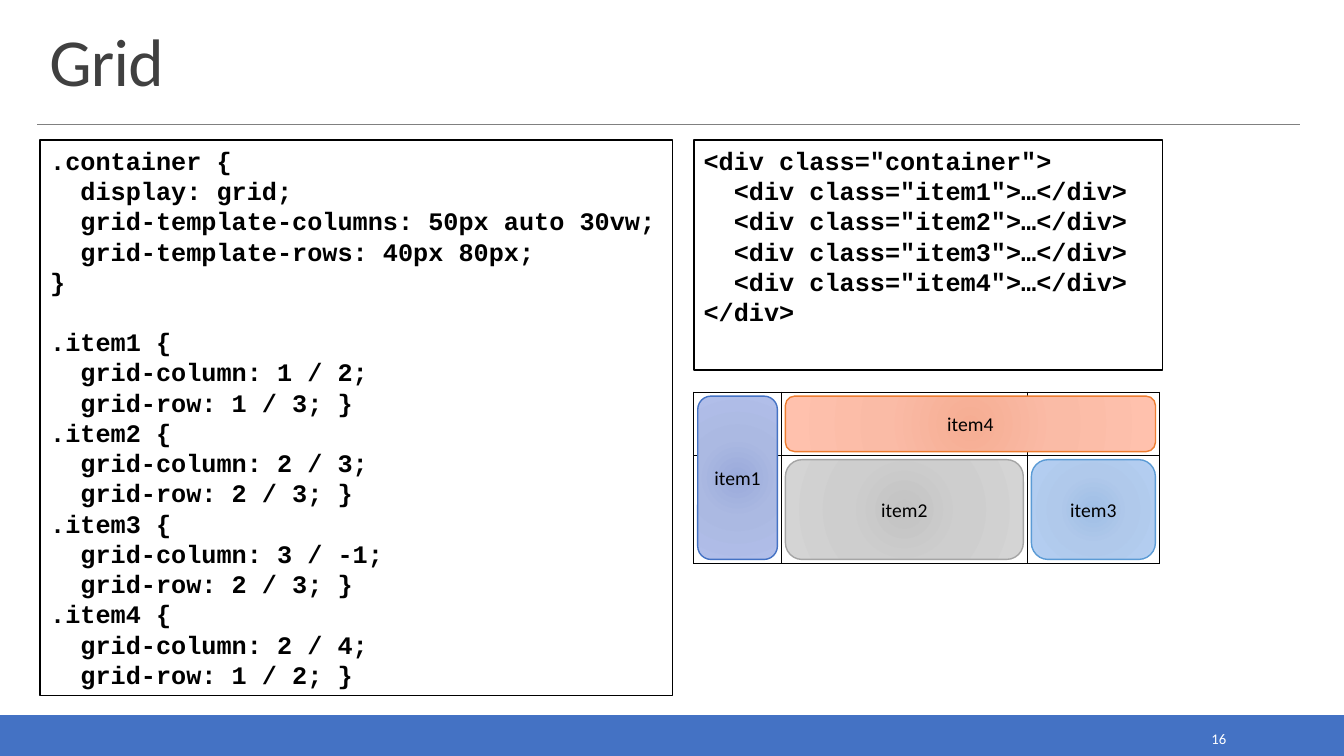
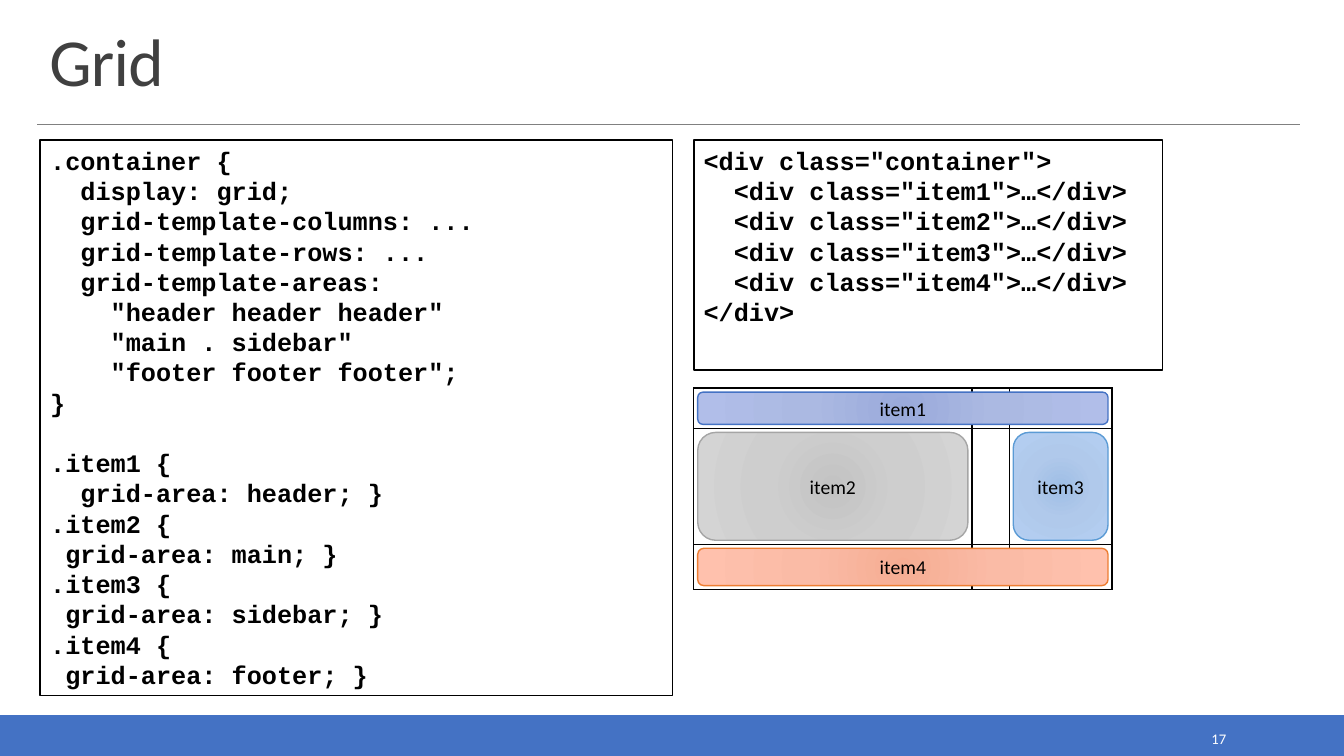
from dataclasses import dataclass
from itertools import accumulate

import pptx
import pptx.dml.color
import pptx.enum.shapes
import pptx.enum.text
import pptx.oxml
import pptx.oxml.ns
import pptx.slide
import pptx.text.text
import pptx.util
from lxml import etree

Inches = pptx.util.Inches
Pt = pptx.util.Pt
qn = pptx.oxml.ns.qn
Align = pptx.enum.text.PP_ALIGN
Anchor = pptx.enum.text.MSO_ANCHOR
Shape = pptx.enum.shapes.MSO_SHAPE


@dataclass(frozen=True)
class Theme:
    band: str = "4472C4"
    rule: str = "808080"
    title: str = "404040"
    ink: str = "000000"
    paper: str = "FFFFFF"
    body_font: str = "Calibri"
    code_font: str = "Courier New"
    title_size: float = 48
    code_size: float = 18
    code_pitch: float = 21.6
    item_size: float = 14
    number_size: float = 10.5


@dataclass(frozen=True)
class Box:
    left: float
    top: float
    width: float
    height: float

    def lengths(self) -> tuple[int, ...]:
        return tuple(Inches(v) for v in (self.left, self.top, self.width, self.height))


@dataclass(frozen=True)
class Tint:
    """Line colour and gradient stops, from the centre outwards."""
    line: str
    centre: str
    middle: str
    edge: str


@dataclass(frozen=True)
class Item:
    """A grid item; the spans are grid lines counted from zero."""
    label: str
    columns: tuple[int, int]
    rows: tuple[int, int]


@dataclass(frozen=True)
class Grid:
    left: float
    top: float
    widths: tuple[float, ...]
    heights: tuple[float, ...]
    items: tuple[Item, ...]


@dataclass(frozen=True)
class Lesson:
    number: int
    css: str
    grid: Grid


THEME = Theme()
WIDTH, HEIGHT = 13.33, 7.5
ITEM_GAP = 0.04
CSS_BOX = Box(0.4, 1.39, 6.27, 5.51)
HTML_BOX = Box(6.88, 1.39, 4.65, 2.28)

TINTS = {
    "item1": Tint("4472C4", "9AAADB", "ABB9E2", "B1BEE9"),
    "item2": Tint("A5A5A5", "C3C3C3", "CECECE", "D4D4D4"),
    "item3": Tint("5B9BD5", "9FBEE5", "B0C9EB", "B4CFF2"),
    "item4": Tint("ED7D31", "F6AD93", "FABBA6", "FFC1AD"),
}

HTML = "\n".join([
    '<div class="container">',
    *(f'  <div class="{label}">…</div>' for label in TINTS),
    "</div>",
])

LINES_CSS = """.container {
  display: grid;
  grid-template-columns: 50px auto 30vw;
  grid-template-rows: 40px 80px;
}

.item1 {
  grid-column: 1 / 2;
  grid-row: 1 / 3; }
.item2 {
  grid-column: 2 / 3;
  grid-row: 2 / 3; }
.item3 {
  grid-column: 3 / -1;
  grid-row: 2 / 3; }
.item4 {
  grid-column: 2 / 4;
  grid-row: 1 / 2; }"""

AREAS_CSS = """.container {
  display: grid;
  grid-template-columns: ...
  grid-template-rows: ...
  grid-template-areas:
    "header header header"
    "main . sidebar"
    "footer footer footer";
}

.item1 {
  grid-area: header; }
.item2 {
 grid-area: main; }
.item3 {
 grid-area: sidebar; }
.item4 {
 grid-area: footer; }"""

LESSONS = (
    Lesson(16, LINES_CSS, Grid(6.88, 3.89, (0.87, 2.44, 1.31), (0.63, 1.07), (
        Item("item1", (0, 1), (0, 2)),
        Item("item2", (1, 2), (1, 2)),
        Item("item3", (2, 3), (1, 2)),
        Item("item4", (1, 3), (0, 1)),
    ))),
    Lesson(17, AREAS_CSS, Grid(6.88, 3.85, (2.76, 0.37, 1.02), (0.4, 1.15, 0.45), (
        Item("item1", (0, 3), (0, 1)),
        Item("item2", (0, 1), (1, 2)),
        Item("item3", (2, 3), (1, 2)),
        Item("item4", (0, 3), (2, 3)),
    ))),
)


def rgb(value: str) -> pptx.dml.color.RGBColor:
    return pptx.dml.color.RGBColor.from_string(value)


def set_line(line, colour: str, width: float) -> None:
    line.color.rgb = rgb(colour)
    line.width = Pt(width)


def style(paragraph, font: str, size: float, colour: str,
          align: Align = Align.LEFT, bold: bool = False) -> None:
    paragraph.alignment = align
    paragraph.font.name = font
    paragraph.font.size = Pt(size)
    paragraph.font.bold = bold
    paragraph.font.color.rgb = rgb(colour)


def add_label(slide: pptx.slide.Slide, box: Box, text: str, size: float, colour: str,
              align: Align, anchor: Anchor) -> pptx.text.text._Paragraph:
    frame = slide.shapes.add_textbox(*box.lengths()).text_frame
    frame.word_wrap = True
    frame.vertical_anchor = anchor
    paragraph = frame.paragraphs[0]
    paragraph.text = text
    style(paragraph, THEME.body_font, size, colour, align)
    return paragraph


def add_frame(slide: pptx.slide.Slide, title: str, number: int) -> None:
    """Draw the band, rule, title and slide number that every slide carries."""
    band = slide.shapes.add_shape(Shape.RECTANGLE, *Box(0, 7.1, WIDTH, 0.4).lengths())
    band.shadow.inherit = False
    band.fill.solid()
    band.fill.fore_color.rgb = rgb(THEME.band)
    set_line(band.line, THEME.band, 1.25)

    rule = slide.shapes.add_connector(
        pptx.enum.shapes.MSO_CONNECTOR.STRAIGHT,
        Inches(0.37), Inches(1.23), Inches(12.89), Inches(1.23))
    set_line(rule.line, THEME.rule, 0.5)
    etree.SubElement(rule._element.spPr, qn("a:effectLst"))

    heading = add_label(slide, Box(0.39, 0.2, 12.52, 0.84), title, THEME.title_size,
                        THEME.title, Align.LEFT, Anchor.BOTTOM)
    heading.line_spacing = 0.85
    heading._p.get_or_add_pPr().get_or_add_defRPr().set("spc", "-50")
    add_label(slide, Box(10.83, 7.19, 1.43, 0.28), str(number), THEME.number_size,
              THEME.paper, Align.RIGHT, Anchor.MIDDLE)


def add_code(slide: pptx.slide.Slide, box: Box, code: str) -> None:
    """Set a listing in a box; a blank line in it becomes space before a paragraph."""
    listing = slide.shapes.add_textbox(*box.lengths())
    set_line(listing.line, THEME.ink, 1.25)
    frame = listing.text_frame
    frame.word_wrap = True
    for block_index, block in enumerate(code.split("\n\n")):
        for line_index, line in enumerate(block.split("\n")):
            first = block_index == line_index == 0
            paragraph = frame.paragraphs[0] if first else frame.add_paragraph()
            paragraph.text = line
            paragraph.line_spacing = Pt(THEME.code_pitch)
            if block_index and not line_index:
                paragraph.space_before = Pt(THEME.code_pitch)
            style(paragraph, THEME.code_font, THEME.code_size, THEME.ink, bold=True)


def outline_cell(cell) -> None:
    cell.margin_top = cell.margin_bottom = 0
    properties = cell._tc.get_or_add_tcPr()
    for side in ("lnL", "lnR", "lnT", "lnB"):
        border = etree.SubElement(properties, qn(f"a:{side}"), w=str(Pt(1)))
        fill = etree.SubElement(border, qn("a:solidFill"))
        etree.SubElement(fill, qn("a:srgbClr"), val=THEME.ink)
    cell.fill.background()


def fill_radial(shape, tint: Tint) -> None:
    gradient = etree.Element(qn("a:gradFill"), rotWithShape="1")
    stops = etree.SubElement(gradient, qn("a:gsLst"))
    for percent, colour in ((0, tint.centre), (45, tint.middle), (100, tint.edge)):
        stop = etree.SubElement(stops, qn("a:gs"), pos=str(percent * 1000))
        etree.SubElement(stop, qn("a:srgbClr"), val=colour)
    circle = etree.SubElement(gradient, qn("a:path"), {"path": "circle"})
    etree.SubElement(circle, qn("a:fillToRect"), {side: "100000" for side in "ltrb"})
    shape.fill.background()
    properties = shape._element.spPr
    properties.replace(properties.find(qn("a:noFill")), gradient)


def add_item(slide: pptx.slide.Slide, box: Box, label: str) -> None:
    tile = slide.shapes.add_shape(Shape.ROUNDED_RECTANGLE, *box.lengths())
    tile.shadow.inherit = False
    fill_radial(tile, TINTS[label])
    set_line(tile.line, TINTS[label].line, 1)
    tile.text_frame.vertical_anchor = Anchor.MIDDLE
    paragraph = tile.text_frame.paragraphs[0]
    paragraph.text = label
    style(paragraph, THEME.body_font, THEME.item_size, THEME.ink, Align.CENTER)


def add_grid(slide: pptx.slide.Slide, grid: Grid) -> None:
    """Draw the grid as a table and lay each item inside the cells it spans."""
    extent = Box(grid.left, grid.top, sum(grid.widths), sum(grid.heights))
    table = slide.shapes.add_table(
        len(grid.heights), len(grid.widths), *extent.lengths()).table
    table.first_row = table.horz_banding = False
    for column, width in zip(table.columns, grid.widths):
        column.width = Inches(width)
    for row, height in zip(table.rows, grid.heights):
        row.height = Inches(height)
    for cell in table.iter_cells():
        outline_cell(cell)

    across = list(accumulate(grid.widths, initial=grid.left))
    down = list(accumulate(grid.heights, initial=grid.top))
    for item in grid.items:
        left, right = (across[line] for line in item.columns)
        top, bottom = (down[line] for line in item.rows)
        add_item(slide, Box(left + ITEM_GAP, top + ITEM_GAP,
                            right - left - 2 * ITEM_GAP,
                            bottom - top - 2 * ITEM_GAP), item.label)


def main() -> None:
    deck = pptx.Presentation()
    deck.slide_width, deck.slide_height = Inches(WIDTH), Inches(HEIGHT)
    blank = deck.slide_layouts[6]
    for lesson in LESSONS:
        slide = deck.slides.add_slide(blank)
        add_frame(slide, "Grid", lesson.number)
        add_code(slide, CSS_BOX, lesson.css)
        add_code(slide, HTML_BOX, HTML)
        add_grid(slide, lesson.grid)
    deck.save("out.pptx")


if __name__ == "__main__":
    main()
